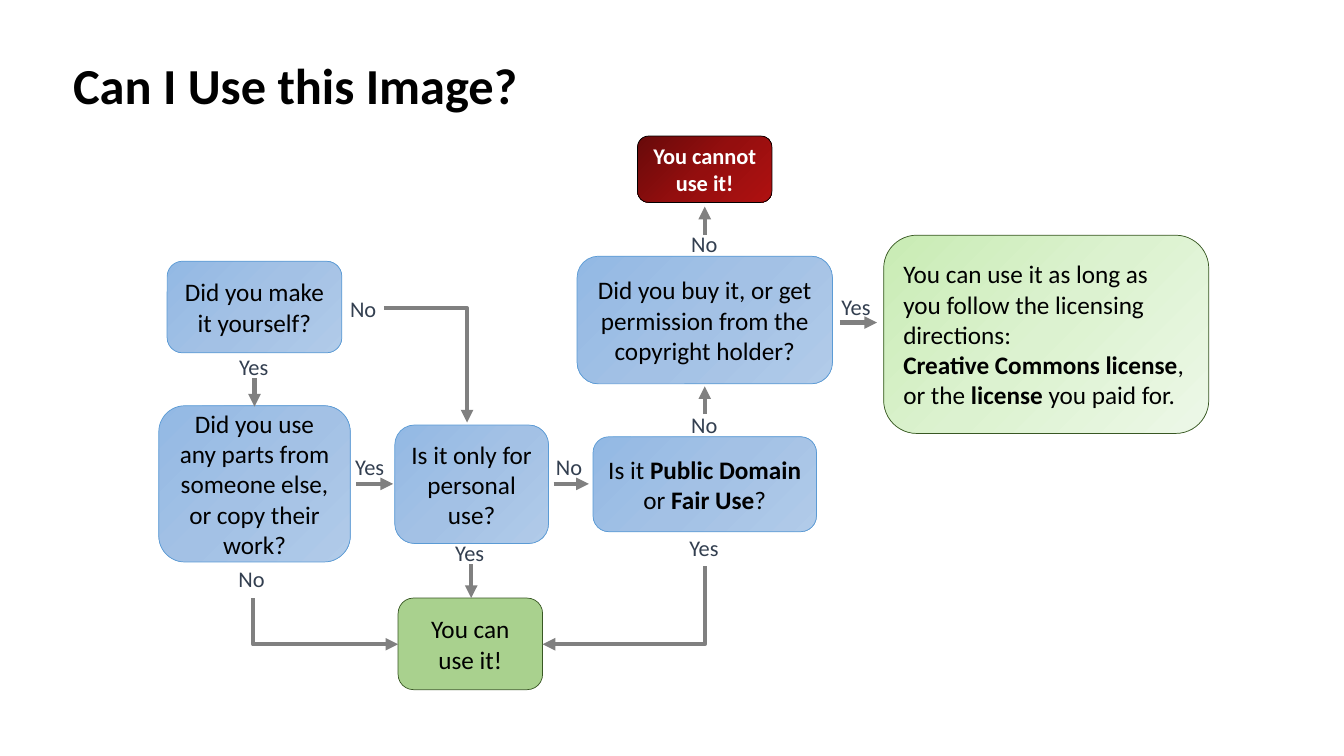
from copy import deepcopy
from dataclasses import dataclass

from lxml.etree import SubElement
from pptx import Presentation
from pptx.dml.color import RGBColor
from pptx.enum.shapes import MSO_CONNECTOR, MSO_SHAPE
from pptx.enum.text import MSO_ANCHOR, MSO_AUTO_SIZE, PP_ALIGN
from pptx.oxml.ns import qn
from pptx.util import Inches, Pt

COLUMNS, ROWS = 160, 90


@dataclass(frozen=True)
class Theme:
    font: str = "Calibri"
    title_size: int = 36
    body_size: int = 18
    small_size: int = 16
    ink: str = "000000"
    white: str = "FFFFFF"
    label: str = "333F50"
    arrow: str = "808080"
    arrow_width: float = 3
    border_width: float = 0.5
    # Each box style: fill colours from top left to bottom right, then border
    question: tuple = (("93B9E4", "A3C1E5", "B1CBE9"), "5B9BD5")
    allowed: tuple = (("A9D18E",), "385723")
    licensed: tuple = (("C9ECB4", "DCF2D0", "EDF8E8"), "385723")
    refused: tuple = (("680A0A", "940E0E", "AF1111"), "000000")


class Flowchart:
    """Draws flowchart elements, placed in grid columns and rows."""

    def __init__(self, prs, theme):
        self.theme = theme
        self.slide = prs.slides.add_slide(prs.slide_layouts[5])
        self.column = prs.slide_width / COLUMNS
        self.row = prs.slide_height / ROWS

    def scale(self, x, y):
        return round(x * self.column), round(y * self.row)

    def style_text(self, p, size, color, bold=None):
        for r in p.runs:
            r.font.name = self.theme.font
            r.font.size = Pt(size)
            r.font.color.rgb = RGBColor.from_string(color)
            if bold is not None:
                r.font.bold = bold

    def title(self, text, x, y, w, h):
        s = self.slide.shapes.title
        s.left, s.top = self.scale(x, y)
        s.width, s.height = self.scale(w, h)
        tf = s.text_frame
        tf.text = text
        tf.word_wrap = False
        tf.auto_size = MSO_AUTO_SIZE.SHAPE_TO_FIT_TEXT
        tf.vertical_anchor = MSO_ANCHOR.TOP
        p = tf.paragraphs[0]
        p.alignment = PP_ALIGN.LEFT
        self.style_text(p, self.theme.title_size, self.theme.ink, True)

    def label(self, text, x, y):
        s = self.slide.shapes.add_textbox(*self.scale(x, y), *self.scale(6.2, 4.4))
        tf = s.text_frame
        tf.text = text
        tf.word_wrap = True
        tf.auto_size = MSO_AUTO_SIZE.SHAPE_TO_FIT_TEXT
        self.style_text(tf.paragraphs[0], self.theme.small_size, self.theme.label)

    def fill(self, s, colors):
        if len(colors) == 1:
            s.fill.solid()
            s.fill.fore_color.rgb = RGBColor.from_string(colors[0])
            return
        s.fill.gradient()
        s.fill.gradient_angle = 315
        stops = next(s._element.spPr.iter(qn("a:gsLst")))
        stops.append(deepcopy(stops[0]))
        for i, (stop, color) in enumerate(zip(s.fill.gradient_stops, colors)):
            stop.position = i / 2
            stop.color.rgb = RGBColor.from_string(color)

    def box(self, text, style, x, y, w, h, align=PP_ALIGN.CENTER, size=None, color=None):
        """Add a rounded box; ** marks bold text and a newline breaks the line."""
        s = self.slide.shapes.add_shape(
            MSO_SHAPE.ROUNDED_RECTANGLE, *self.scale(x, y), *self.scale(w, h))
        s.shadow.inherit = False
        colors, border = style
        self.fill(s, colors)
        s.line.color.rgb = RGBColor.from_string(border)
        s.line.width = Pt(self.theme.border_width)
        tf = s.text_frame
        tf.word_wrap = True
        tf.vertical_anchor = MSO_ANCHOR.MIDDLE
        p = tf.paragraphs[0]
        p.alignment = align
        for i, line in enumerate(text.split("\n")):
            if i:
                p.add_line_break()
            for j, piece in enumerate(line.split("**")):
                if piece:
                    r = p.add_run()
                    r.text = piece
                    r.font.bold = j % 2 == 1
        self.style_text(p, size or self.theme.body_size, color or self.theme.ink)

    def arrow(self, x1, y1, x2, y2, kind=MSO_CONNECTOR.STRAIGHT):
        c = self.slide.shapes.add_connector(
            kind, *self.scale(x1, y1), *self.scale(x2, y2))
        c.line.color.rgb = RGBColor.from_string(self.theme.arrow)
        c.line.width = Pt(self.theme.arrow_width)
        spPr = c._element.spPr
        SubElement(spPr.find(qn("a:ln")), qn("a:tailEnd"), type="triangle")
        SubElement(spPr, qn("a:effectLst"))
        return c

    def bent_arrow(self, x1, y1, x2, y2, down_first=False):
        """Add an arrow with one corner, going across or down first."""
        c = self.arrow(x1, y1, x2, y2, MSO_CONNECTOR.ELBOW)
        spPr = c._element.spPr
        spPr.find(qn("a:prstGeom")).set("prst", "bentConnector2")
        if not down_first:
            return
        # A quarter turn swaps the sides of the frame about its centre
        w, h = c.width, c.height
        c.left, c.top = c.left + (w - h) // 2, c.top + (h - w) // 2
        c.width, c.height = h, w
        xfrm = spPr.find(qn("a:xfrm"))
        rightward = x2 > x1
        xfrm.set("rot", str((270 if rightward else 90) * 60000))
        xfrm.set("flipH", str(int(rightward)))


def main():
    prs = Presentation()
    prs.slide_width, prs.slide_height = Inches(13.33), Inches(7.5)
    theme = Theme()
    chart = Flowchart(prs, theme)
    chart.title("Can I Use this Image?", 7.5, 5.8, 55.8, 8.5)

    for text, *frame in (
        ("Did you make it yourself?", 19.9, 31.1, 20.8, 10.9),
        ("Did you use any parts from someone else, or copy their work?",
         18.9, 48.3, 22.8, 18.6),
        ("Is it only for personal use?", 47, 50.6, 18.3, 14.1),
        ("Is it **Public Domain **or **Fair Use**?", 70.6, 52, 26.6, 11.3),
        ("Did you buy it, or get permission from the copyright holder?",
         68.7, 30.5, 30.4, 15.2),
    ):
        chart.box(text, theme.question, *frame)
    chart.box("You can use it!", theme.allowed, 47.4, 71.2, 17.2, 10.9)
    chart.box("**You cannot use it!**", theme.refused, 75.9, 16.2, 16, 7.9,
              size=theme.small_size, color=theme.white)
    chart.box("You can use it as long as you follow the licensing directions:\n"
              "**Creative Commons license**, or the **license** you paid for.",
              theme.licensed, 105.2, 28, 38.7, 23.6, align=PP_ALIGN.LEFT)

    for ends in (
        (30.3, 45, 30.3, 48.4),
        (42.4, 57.6, 46.8, 57.6),
        (56.1, 67.2, 56.1, 71.2),
        (65.9, 57.6, 70.1, 57.6),
        (83.9, 49.3, 83.9, 46),
        (83.9, 28, 83.9, 24.6),
        (100, 38.4, 104.4, 38.4),
    ):
        chart.arrow(*ends)
    chart.bent_arrow(45.7, 36.7, 55.6, 50.3)
    chart.bent_arrow(30.1, 71.2, 47.4, 76.7, down_first=True)
    chart.bent_arrow(83.9, 67.4, 64.6, 76.7, down_first=True)

    answers = {
        "Yes": ((27.3, 41.4), (41.1, 53.4), (53, 63.6), (80.9, 63), (99, 34.3)),
        "No": ((27.2, 66.7), (40.5, 34.6), (65, 53.4), (81.1, 48.4), (81.1, 26.8)),
    }
    for answer, places in answers.items():
        for place in places:
            chart.label(answer, *place)

    prs.save("out.pptx")


if __name__ == "__main__":
    main()
